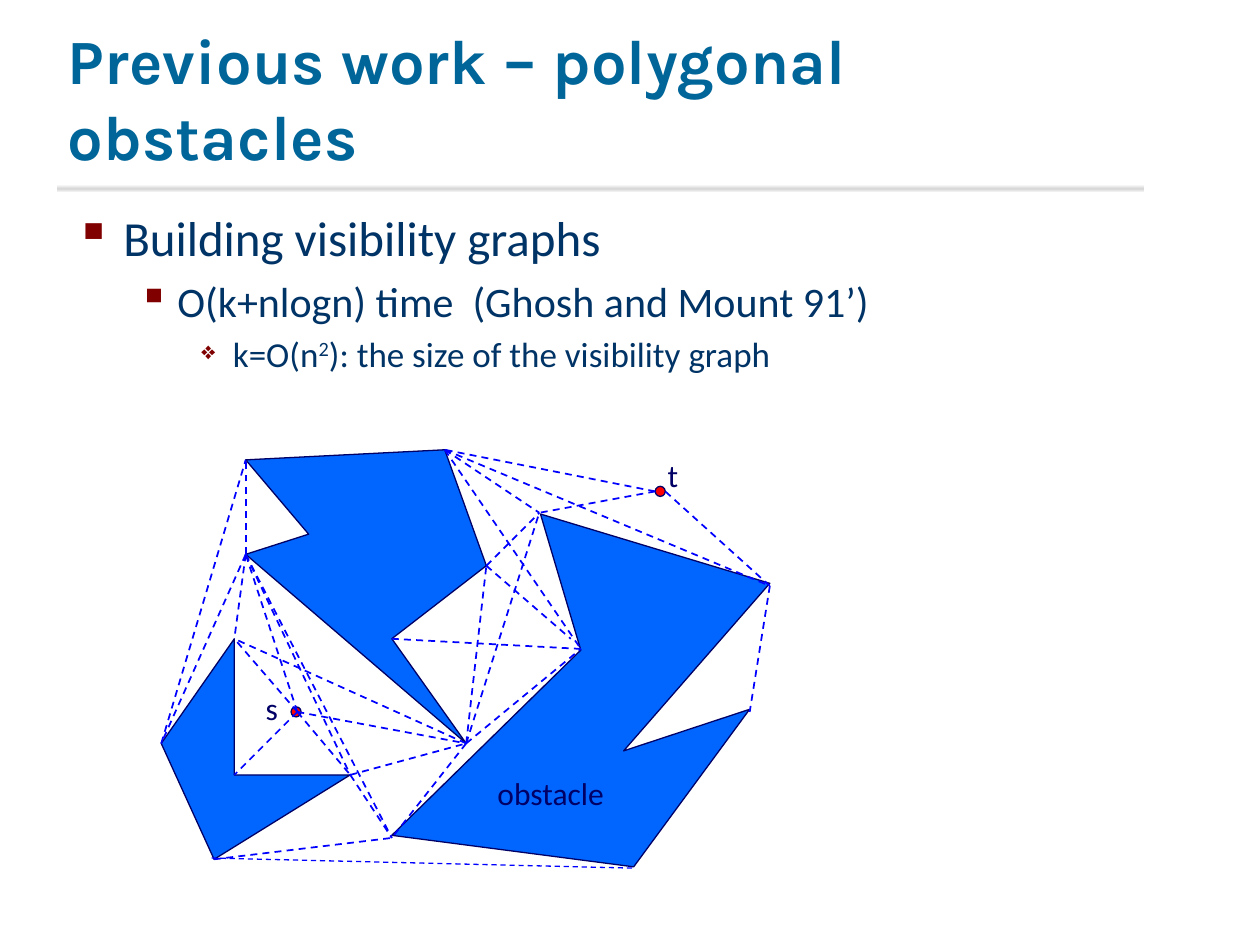
from lxml import etree
from pptx import Presentation
from pptx import util as u
from pptx.dml.color import RGBColor
from pptx.enum import dml, shapes, text
from pptx.oxml import ns

TEAL = RGBColor(0x00, 0x66, 0x99)
NAVY = RGBColor(0x00, 0x33, 0x66)
INK = RGBColor(0x00, 0x00, 0x66)
OBSTACLE_BLUE = RGBColor(0x00, 0x66, 0xFF)
EDGE_BLUE = RGBColor(0x00, 0x00, 0xFF)
RED = RGBColor(0xFF, 0x00, 0x00)
BULLET_RED = "800000"

OBSTACLES = [
    [(1.86, 5.07), (1.28, 5.9), (1.7, 6.82), (2.78, 6.15), (1.86, 6.15)],
    [(3.53, 3.57), (1.95, 3.65), (2.45, 4.24), (1.95, 4.4), (3.7, 5.9),
     (3.11, 5.07), (3.86, 4.49)],
    [(4.29, 4.08), (4.61, 5.16), (3.11, 6.63), (5.03, 6.88), (5.95, 5.63),
     (4.95, 5.96), (6.11, 4.63)],
]
START, TARGET = (2.36, 5.65), (5.2, 3.9)
LEFT_TOP, LEFT_WEST, LEFT_BOTTOM, LEFT_EAST, LEFT_NOTCH = OBSTACLES[0]
UPPER_TOP, UPPER_WEST, _, UPPER_ELBOW, UPPER_TIP, UPPER_NOTCH, UPPER_EAST = OBSTACLES[1]
RIGHT_TOP, RIGHT_NOTCH, RIGHT_WEST = (4.28, 4.07), (4.61, 5.15), (3.11, 6.65)
RIGHT_EAST, RIGHT_LOW = (6.11, 4.65), (5.95, 5.65)

# Each vertex with the vertices it sees
VISIBILITY = [
    (START, [UPPER_TIP, LEFT_EAST, LEFT_NOTCH, LEFT_TOP, UPPER_ELBOW]),
    (UPPER_TIP, [RIGHT_WEST, RIGHT_TOP, UPPER_EAST, RIGHT_NOTCH, LEFT_TOP]),
    (UPPER_EAST, [RIGHT_TOP, (4.53, 5.07)]),
    (UPPER_NOTCH, [RIGHT_NOTCH]),
    (UPPER_TOP, [RIGHT_NOTCH, RIGHT_TOP, RIGHT_EAST]),
    (UPPER_ELBOW, [LEFT_TOP, LEFT_WEST, UPPER_WEST, RIGHT_WEST, LEFT_EAST]),
    (LEFT_WEST, [UPPER_WEST]),
    (LEFT_BOTTOM, [RIGHT_WEST]),
    (LEFT_EAST, [RIGHT_WEST, UPPER_TIP]),
    (TARGET, [UPPER_TOP, RIGHT_TOP]),
    (RIGHT_EAST, [RIGHT_LOW, (5.28, 3.9)]),
]


def style(shape, fill):
    shape.shadow.inherit = False
    shape.fill.solid()
    shape.fill.fore_color.rgb = fill
    shape.line.color.rgb = INK
    shape.line.width = u.Pt(0.75)


def add_text(page, area, wrap=True):
    box = page.shapes.add_textbox(*map(u.Inches, area))
    box.text_frame.word_wrap = wrap
    return box.text_frame


def set_font(para, name, size, color):
    para.font.name = name
    para.font.size = u.Pt(size)
    para.font.color.rgb = color


def add_title(page):
    frame = add_text(page, (0.44, 0.17, 8.5, 1.25))
    frame.vertical_anchor = text.MSO_ANCHOR.BOTTOM
    para = frame.paragraphs[0]
    span = para.add_run()
    span.text = "Previous work – polygonal obstacles"
    set_font(para, "Karla", 36, TEAL)
    para.font.bold = True
    span.font._element.set("spc", "10")


def add_title_rule(page):
    """Soft grey line fading to white above and below."""
    rule = page.shapes.add_shape(shapes.MSO_SHAPE.RECTANGLE,
                                 *map(u.Inches, (0.45, 1.41, 8.63, 0.11)))
    rule.shadow.inherit = False
    rule.line.fill.background()
    rule.fill.gradient()
    rule.fill.gradient_angle = 270
    stops = rule._element.spPr.find(ns.qn("a:gradFill")).find(ns.qn("a:gsLst"))
    for stop in list(stops):
        stops.remove(stop)
    for position, color in ((0, "FFFFFF"), (50, "FFFFFF"), (82, "D4D4D4"), (100, "F0F0F0")):
        stop = etree.SubElement(stops, ns.qn("a:gs"), pos=str(position * 1000))
        etree.SubElement(stop, ns.qn("a:srgbClr"), val=color)


def add_bullet(para, level, margin, hanging, symbol, scale):
    para.level = level
    props = para._p.get_or_add_pPr()
    props.set("marL", str(u.Inches(margin)))
    props.set("indent", str(-u.Inches(hanging)))
    color = etree.Element(ns.qn("a:buClr"))
    etree.SubElement(color, ns.qn("a:srgbClr"), val=BULLET_RED)
    size = etree.Element(ns.qn("a:buSzPct"), val=str(scale * 1000))
    char = etree.Element(ns.qn("a:buChar"), char=symbol)
    defaults = props.find(ns.qn("a:defRPr"))
    for part in (color, size, char):
        defaults.addprevious(part)


def add_body(page):
    frame = add_text(page, (0.5, 1.6, 8.95, 1.99))
    items = [
        (["Building visibility graphs"], 28, 0.38, 0.38, "▪", 100),
        (["O(k+nlogn) time  (Ghosh and Mount 91’)"], 24, 0.81, 0.31, "▪", 100),
        (["k=O(n", "2", "): the size of the visibility graph"], 20, 1.25, 0.25, "❖", 70),
    ]
    for level, (parts, size, margin, hanging, symbol, scale) in enumerate(items):
        para = frame.add_paragraph() if level else frame.paragraphs[0]
        para.space_before = u.Pt(size * 0.2)
        set_font(para, "Calibri", size, NAVY)
        add_bullet(para, level, margin, hanging, symbol, scale)
        for part in parts:
            span = para.add_run()
            span.text = part
            if part == "2":
                span.font._element.set("baseline", "30000")


def add_obstacle(page, points):
    corners = [(u.Inches(x), u.Inches(y)) for x, y in points]
    builder = page.shapes.build_freeform(*corners[0])
    builder.add_line_segments(corners[1:], close=True)
    style(builder.convert_to_shape(), OBSTACLE_BLUE)


def add_dot(page, left, top):
    dot = page.shapes.add_shape(shapes.MSO_SHAPE.OVAL,
                                *map(u.Inches, (left, top, 0.08, 0.08)))
    style(dot, RED)


def add_label(page, words, area):
    para = add_text(page, area, wrap=False).paragraphs[0]
    para.text = words
    set_font(para, "Calibri", 18, INK)


def add_edge(page, start, end, width=1):
    edge = page.shapes.add_connector(shapes.MSO_CONNECTOR.STRAIGHT,
                                     *map(u.Inches, (*start, *end)))
    edge.line.color.rgb = EDGE_BLUE
    edge.line.width = u.Pt(width)
    edge.line.dash_style = dml.MSO_LINE.DASH
    etree.SubElement(edge._element.spPr, ns.qn("a:effectLst"))


def main():
    deck = Presentation()
    deck.slide_width, deck.slide_height = u.Inches(10), u.Inches(7.5)
    page = deck.slides.add_slide(deck.slide_layouts[6])
    add_title_rule(page)
    add_title(page)
    add_body(page)
    for points in OBSTACLES:
        add_obstacle(page, points)
    add_dot(page, 2.31, 5.61)
    add_dot(page, 5.2, 3.86)
    add_label(page, "s", (2.01, 5.42, 0.33, 0.4))
    add_label(page, "t", (5.2, 3.57, 0.27, 0.4))
    add_label(page, "obstacle", (3.85, 6.09, 1.13, 0.4))
    for vertex, visible in VISIBILITY:
        for other in visible:
            add_edge(page, vertex, other)
    add_edge(page, (1.68, 6.81), (5.02, 6.89), 0.75)
    deck.save("out.pptx")


if __name__ == "__main__":
    main()
